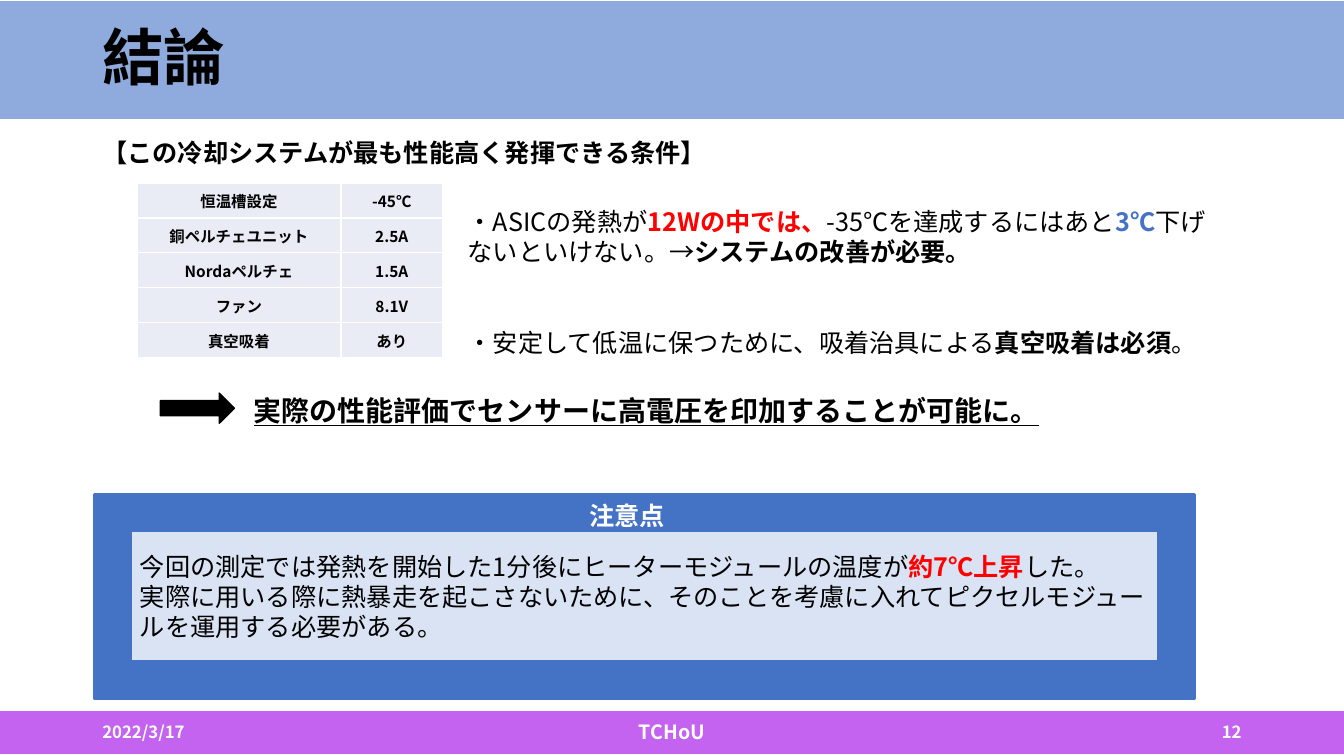
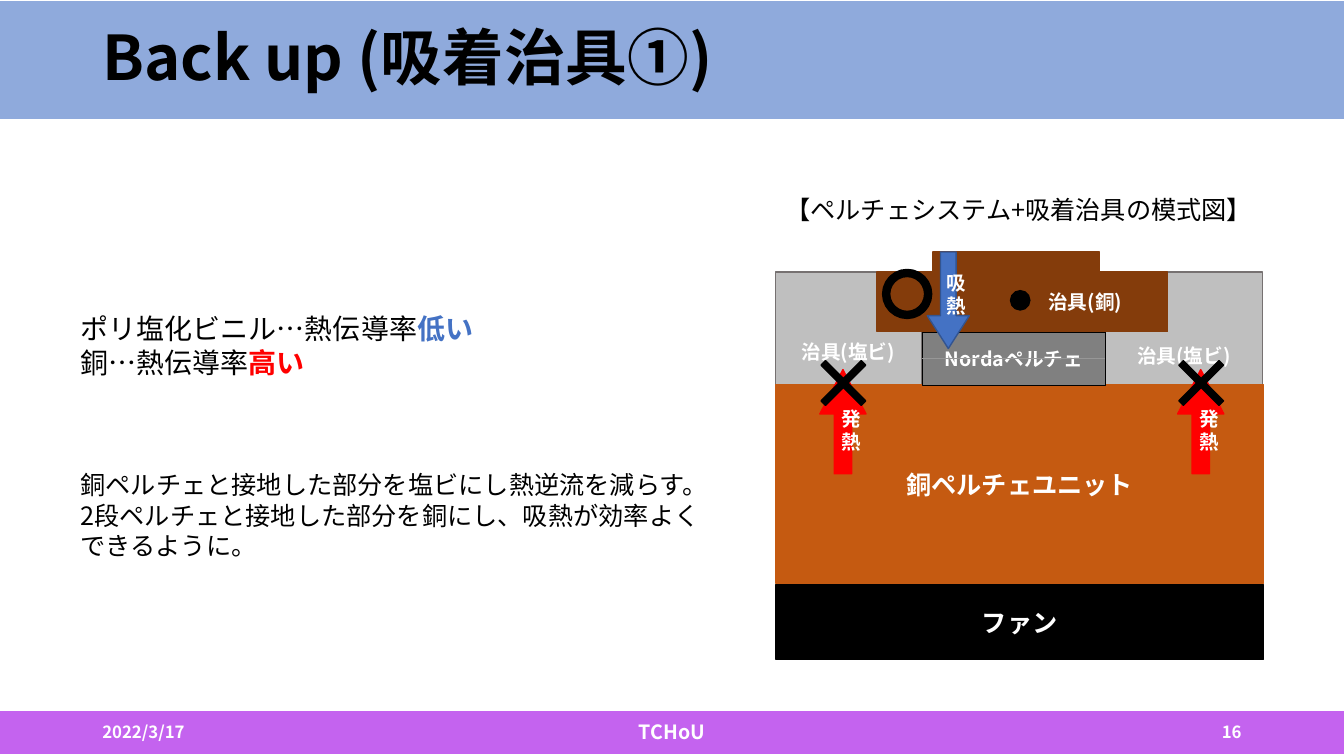
from lxml.etree import SubElement
from pptx import Presentation
from pptx.dml.color import RGBColor
from pptx.enum.shapes import MSO_CONNECTOR as LINK, MSO_SHAPE as SHAPE
from pptx.enum.text import MSO_ANCHOR as ANCHOR, PP_ALIGN as ALIGN
from pptx.oxml.ns import qn
from pptx.util import Inches, Pt

# Shared style
FONT = "Noto Sans CJK JP"
BLACK, WHITE, RED, BLUE = "000000", "FFFFFF", "FF0000", "4472C4"
NAVY, PALE = "325491", "DAE3F3"
HEADER, FOOTER = "8FAADC", "C463EF"
CELL = "E9EBF5"
COPPER, DARK_COPPER = "C55A11", "843C0B"
PVC, PVC_EDGE, GRAY, RULE = "BFBFBF", "767171", "808080", "979797"

# The slide is a grid of 160 columns and 90 rows
WIDTH, HEIGHT = 13.33, 7.5
COLUMNS, ROWS = 160, 90


def color(code):
    return RGBColor.from_string(code)


def across(columns):
    return Inches(WIDTH * columns / COLUMNS)


def down(rows):
    return Inches(HEIGHT * rows / ROWS)


def place(left, top, width, height):
    return across(left), down(top), across(width), down(height)


class Canvas:
    def __init__(self):
        self.deck = Presentation()
        self.deck.slide_width = Inches(WIDTH)
        self.deck.slide_height = Inches(HEIGHT)
        self.page = None

    def new_page(self, title, number):
        """Start a page with its bands, title and footer."""
        self.page = self.deck.slides.add_slide(self.deck.slide_layouts[6])
        self.shape(SHAPE.RECTANGLE, (0, 84.7, 160, 5), FOOTER)
        self.shape(SHAPE.RECTANGLE, (0, 0.24, 160, 13.9), HEADER)
        self.text((11, 0.24, 138, 13.9), [[(title, BLACK, True)]], 44,
                  anchor=ANCHOR.MIDDLE, spacing=0.9)
        for left, width, label, size, align in (
                (11, 36, "2022/3/17", 12, ALIGN.LEFT),
                (53, 54, "TCHoU", 14, ALIGN.CENTER),
                (113, 36, str(number), 12, ALIGN.RIGHT)):
            self.text((left, 84.7, width, 4.8), [[(label, WHITE, True)]], size,
                      align, ANCHOR.MIDDLE)

    def style(self, span, size, code, bold, underline=False):
        font = span.font
        font.size, font.bold, font.name = Pt(size), bold, FONT
        if underline:
            font.underline = True
        font.color.rgb = color(code)
        SubElement(span._r.get_or_add_rPr(), qn("a:ea")).set("typeface", FONT)

    def fill_text(self, frame, paras, size, align=ALIGN.LEFT, spacing=None,
                  underline=False):
        """Each paragraph is a list of (words, colour, bold) runs."""
        for index, runs in enumerate(paras):
            para = frame.paragraphs[0] if index == 0 else frame.add_paragraph()
            para.alignment = align
            if spacing:
                para.line_spacing = spacing
            for words, code, bold in runs:
                span = para.add_run()
                span.text = words
                self.style(span, size, code, bold, underline)

    def text(self, area, paras, size, align=ALIGN.LEFT, anchor=ANCHOR.TOP,
             spacing=None, underline=False):
        frame = self.page.shapes.add_textbox(*place(*area)).text_frame
        frame.word_wrap = True
        frame.vertical_anchor = anchor
        self.fill_text(frame, paras, size, align, spacing, underline)
        return frame

    def shape(self, kind, area, fill, line=None, weight=1, adjust=()):
        box = self.page.shapes.add_shape(kind, *place(*area))
        box.shadow.inherit = False
        if fill:
            box.fill.solid()
            box.fill.fore_color.rgb = color(fill)
        else:
            box.fill.background()
        box.line.color.rgb = color(line or fill)
        box.line.width = Pt(weight)
        for index, value in enumerate(adjust):
            box.adjustments[index] = value
        return box

    def label(self, box, words, size=14, left=None, top=None):
        """Centred white label, moved aside by wider margins in points."""
        frame = box.text_frame
        if left:
            frame.margin_left = Pt(left)
        if top:
            frame.margin_top = Pt(top)
        self.fill_text(frame, [[(words, WHITE, True)]], size, ALIGN.CENTER)

    def middle_line(self, box, code, weight):
        """Line joining the left and right sides of a box."""
        middle = box.top + box.height // 2
        link = self.page.shapes.add_connector(
            LINK.STRAIGHT, box.left, middle, box.left + box.width, middle)
        link.begin_connect(box, 1)
        link.end_connect(box, 3)
        link.line.color.rgb = color(code)
        link.line.width = Pt(weight)
        SubElement(link._element.spPr, qn("a:effectLst"))

    def table(self, left, top, widths, row_height, rows, size):
        area = place(left, top, sum(widths), row_height * len(rows))
        table = self.page.shapes.add_table(len(rows), len(widths), *area).table
        table.first_row = table.horz_banding = False
        for column, width in zip(table.columns, widths):
            column.width = across(width)
        for row, values in zip(table.rows, rows):
            row.height = down(row_height)
            for cell, value in zip(row.cells, values):
                self.cell(cell, value, size)

    def cell(self, cell, value, size):
        cell.margin_left = cell.margin_right = cell.margin_top = Inches(0.01)
        cell.margin_bottom = 0
        cell.vertical_anchor = ANCHOR.MIDDLE
        self.fill_text(cell.text_frame, [[(value, BLACK, True)]], size, ALIGN.CENTER)
        properties = cell._tc.get_or_add_tcPr()
        for side in ("a:lnL", "a:lnR", "a:lnT", "a:lnB"):
            edge = SubElement(properties, qn(side), w=str(Pt(1)))
            fill = SubElement(edge, qn("a:solidFill"))
            SubElement(fill, qn("a:srgbClr"), val=WHITE)
        cell.fill.solid()
        cell.fill.fore_color.rgb = color(CELL)


def conclusion(canvas):
    canvas.new_page("結論", 12)

    # Best conditions
    canvas.text((11, 16.2, 141, 4.8),
                [[("【この冷却システムが最も性能高く発揮できる条件】", BLACK, True)]],
                18, spacing=0.9)
    canvas.table(16.3, 21.8, (24.3, 12.1), 4.15, (
        ("恒温槽設定", "-45℃"),
        ("銅ペルチェユニット", "2.5A"),
        ("Nordaペルチェ", "1.5A"),
        ("ファン", "8.1V"),
        ("真空吸着", "あり")), 11)

    # Findings
    findings = canvas.text((54.5, 24, 91.5, 19.4), [
        [("・ASICの発熱が", BLACK, False),
         ("12Wの中では、", RED, True),
         ("-35℃を達成するにはあと", BLACK, False),
         ("3℃", BLUE, True),
         ("下げないといけない。→", BLACK, False),
         ("システムの改善が必要。", BLACK, True)],
        [("・安定して低温に保つために、吸着治具による", BLACK, False),
         ("真空吸着は必須", BLACK, True),
         ("。", BLACK, False)]], 18)
    findings.paragraphs[1].space_before = Pt(43)
    canvas.shape(SHAPE.RIGHT_ARROW, (19.1, 46.8, 8.8, 3.6), BLACK)
    canvas.text((29, 46.2, 114.8, 5.3),
                [[("実際の性能評価でセンサーに高電圧を印加することが可能に。", BLACK, True)]],
                20, underline=True)

    # Caution panel
    canvas.shape(SHAPE.RECTANGLE, (11.9, 59.9, 129, 22.2), PALE, NAVY)
    panel = canvas.shape(SHAPE.FRAME, (11.2, 58.9, 131, 24.2), BLUE,
                         weight=2.25, adjust=(0.177,))
    canvas.fill_text(panel.text_frame, [
        [("今回の測定では発熱を開始した1分後にヒーターモジュールの温度が", BLACK, False),
         ("約7℃上昇", RED, True),
         ("した。", BLACK, False)],
        [("実際に用いる際に熱暴走を起こさないために、そのことを考慮に入れて"
          "ピクセルモジュールを運用する必要がある。", BLACK, False)]], 18)
    canvas.text((69, 59, 12.6, 4.8), [[("注意点", WHITE, True)]], 18)


def backup(canvas):
    canvas.new_page("Back up (吸着治具①)", 16)

    # Layers of the cooling system
    for left, width, shift in ((131.6, 18.7, 42), (92.3, 17.4, 37)):
        jig = canvas.shape(SHAPE.RECTANGLE, (left, 32.4, width, 13.4), PVC, PVC_EDGE)
        canvas.label(jig, "治具(塩ビ)", top=shift)
    for top, height, fill, words in ((69.6, 8.9, BLACK, "ファン"),
                                     (45.8, 23.7, COPPER, "銅ペルチェユニット")):
        layer = canvas.shape(SHAPE.RECTANGLE, (92.4, top, 58, height), fill)
        canvas.label(layer, words, 18)
    peltier = canvas.shape(SHAPE.RECTANGLE, (109.8, 39.5, 21.8, 6.4), GRAY, BLACK)
    canvas.label(peltier, "Nordaペルチェ")
    copper_jig = canvas.shape(SHAPE.RECTANGLE, (104.4, 32.4, 34.6, 7.1), DARK_COPPER)
    canvas.label(copper_jig, "治具(銅)", left=97)
    canvas.shape(SHAPE.RECTANGLE, (111.1, 30, 19.8, 2.8), DARK_COPPER)
    canvas.shape(SHAPE.OVAL, (120.3, 34.6, 2.3, 2.3), BLACK)
    canvas.middle_line(peltier, RULE, 0.5)

    # Heat flows
    heat_columns = (97.6, 140.2)
    for left in heat_columns:
        heat = canvas.shape(SHAPE.UP_ARROW, (left, 44, 5.5, 12.4), RED,
                            adjust=(0.377, 0.96))
        canvas.label(heat, "発熱")
    cooling = canvas.shape(SHAPE.DOWN_ARROW, (110.4, 30, 5, 11.5), BLUE, NAVY,
                           adjust=(0.374, 0.783))
    canvas.label(cooling, "吸熱")
    for left in heat_columns:
        canvas.shape(SHAPE.MATH_MULTIPLY, (left - 1.8, 41, 9.2, 9.2), BLACK,
                     adjust=(0.083,))
    canvas.shape(SHAPE.OVAL, (105.5, 32.5, 5, 5), None, BLACK, 6)

    # Caption and explanation
    canvas.text((92.3, 22.6, 59.4, 4.8),
                [[("【ペルチェシステム+吸着治具の模式図】", BLACK, False)]], 18)
    notes = canvas.text((8.4, 36.5, 78.3, 34.7), [
        [("ポリ塩化ビニル…熱伝導率", BLACK, False), ("低い", BLUE, True)],
        [("銅…熱伝導率", BLACK, False), ("高い", RED, True)]], 20)
    reasons = ("銅ペルチェと接地した部分を塩ビにし熱逆流を減らす。",
               "2段ペルチェと接地した部分を銅にし、吸熱が効率よくできるように。")
    for gap, words in zip((65, 0), reasons):
        para = notes.add_paragraph()
        para.space_before = Pt(gap)
        span = para.add_run()
        span.text = words
        canvas.style(span, 18, BLACK, False)


def main():
    canvas = Canvas()
    conclusion(canvas)
    backup(canvas)
    canvas.deck.save("out.pptx")


if __name__ == "__main__":
    main()
